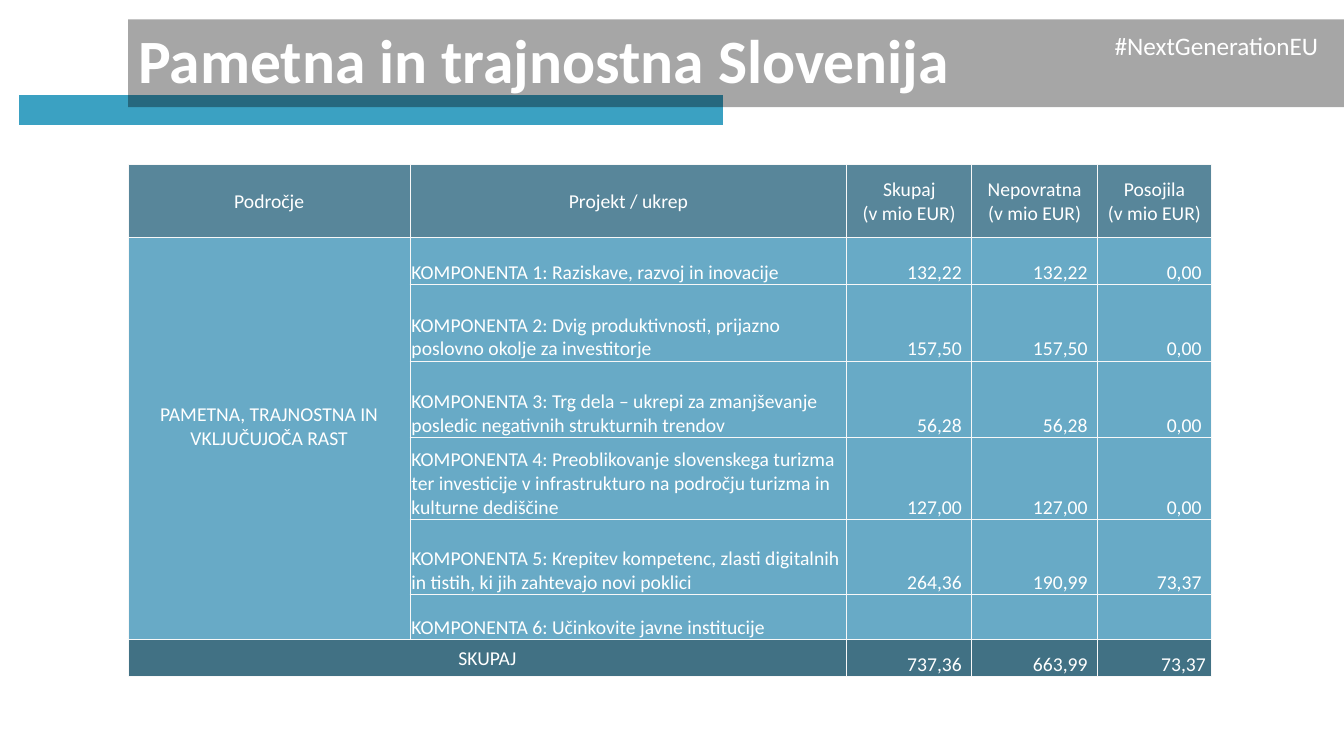
from lxml import etree
from pptx import Presentation
from pptx.dml.color import RGBColor
from pptx.enum import shapes, text
from pptx.oxml.ns import qn
from pptx.util import Cm, Pt

# Content
TITLE = "Pametna in trajnostna Slovenija"
HASHTAG = "#NextGenerationEU"
HEADER = ["Področje", "Projekt / ukrep", "Skupaj\n(v mio EUR)",
          "Nepovratna\n(v mio EUR)", "Posojila\n(v mio EUR)"]
AREA = "PAMETNA, TRAJNOSTNA IN VKLJUČUJOČA RAST"
COMPONENTS = [
    ("KOMPONENTA 1: Raziskave, razvoj in inovacije", "132,22", "132,22", "0,00"),
    ("KOMPONENTA 2: Dvig produktivnosti, prijazno poslovno okolje za investitorje",
     "157,50", "157,50", "0,00"),
    ("KOMPONENTA 3: Trg dela – ukrepi za zmanjševanje posledic negativnih "
     "strukturnih trendov", "56,28", "56,28", "0,00"),
    ("KOMPONENTA 4: Preoblikovanje slovenskega turizma ter investicije v "
     "infrastrukturo na področju turizma in kulturne dediščine",
     "127,00", "127,00", "0,00"),
    ("KOMPONENTA 5: Krepitev kompetenc, zlasti digitalnih in tistih, ki jih "
     "zahtevajo novi poklici", "264,36", "190,99", "73,37"),
    ("KOMPONENTA 6: Učinkovite javne institucije", "", "", ""),
]
TOTAL = ["SKUPAJ", "", "737,36", "663,99", "73,37"]

# Layout and style
COL_WIDTHS = [7.11, 11, 3.15, 3.17, 2.87]
ROW_HEIGHTS = [1.83, 1.19, 1.93, 1.93, 2.06, 1.9, 1.12, 0.94]
LEFT = 3.23
COLORS = {"accent": "3BA1C2", "band": "000000", "text": "FFFFFF", "header": "58869A",
          "body": "68AAC6", "total": "417184", "border": "F8F8F8"}
FONT = "Calibri"


def rgb(name):
    return RGBColor.from_string(COLORS[name])


def style_text(tf, size, align, bold=False):
    for p in tf.paragraphs:
        p.alignment = align
        for r in p.runs:
            r.font.name, r.font.size, r.font.bold = FONT, Pt(size), bold
            r.font.color.rgb = rgb("text")


def add_borders(cell):
    tcPr = cell._tc.get_or_add_tcPr()
    for side in ("a:lnL", "a:lnR", "a:lnT", "a:lnB"):
        ln = etree.SubElement(tcPr, qn(side), w=str(Pt(1)))
        fill = etree.SubElement(ln, qn("a:solidFill"))
        etree.SubElement(fill, qn("a:srgbClr"), val=COLORS["border"])


def build_table(s):
    rows = [HEADER] + [["", *c] for c in COMPONENTS] + [TOTAL]
    rows[1][0] = AREA
    last = len(rows) - 1
    table = s.shapes.add_table(len(rows), len(HEADER), Cm(LEFT), Cm(4.15),
                               Cm(sum(COL_WIDTHS)), Cm(sum(ROW_HEIGHTS))).table
    table.first_row = table.horz_banding = False
    for column, width in zip(table.columns, COL_WIDTHS):
        column.width = Cm(width)
    for row, height in zip(table.rows, ROW_HEIGHTS):
        row.height = Cm(height)

    for i, row in enumerate(rows):
        for j, value in enumerate(row):
            cell = table.cell(i, j)
            add_borders(cell)
            cell.fill.solid()
            cell.fill.fore_color.rgb = rgb({0: "header", last: "total"}.get(i, "body"))
            cell.margin_left = cell.margin_right = cell.margin_top = Cm(0.03)
            cell.margin_bottom = 0
            cell.text = value
            align, anchor = text.PP_ALIGN.CENTER, text.MSO_ANCHOR.MIDDLE
            if i > 0 and j > 0:
                anchor = text.MSO_ANCHOR.BOTTOM
                align = text.PP_ALIGN.LEFT if j == 1 else text.PP_ALIGN.RIGHT
                if j > 1:
                    cell.margin_right = Cm(0.25)
            cell.vertical_anchor = anchor
            style_text(cell.text_frame, 14, align)

    table.cell(1, 0).margin_bottom = Cm(0.6)
    table.cell(last, 4).margin_right = Cm(0.14)
    table.cell(1, 0).merge(table.cell(last - 1, 0))
    table.cell(last, 0).merge(table.cell(last, 1))


def main():
    prs = Presentation()
    prs.slide_width, prs.slide_height = Cm(33.87), Cm(19.05)
    s = prs.slides.add_slide(prs.slide_layouts[5])

    # Accent bar, placed behind the title band
    bar = s.shapes.add_shape(shapes.MSO_SHAPE.FLOWCHART_PROCESS,
                             Cm(0.48), Cm(2.4), Cm(17.73), Cm(0.75))
    bar.shadow.inherit = False
    bar.fill.solid()
    bar.fill.fore_color.rgb = rgb("accent")
    bar.line.fill.background()
    s.shapes._spTree.insert(2, bar._element)

    # Title on a translucent band
    title = s.shapes.title
    title.left, title.top, title.width, title.height = Cm(LEFT), Cm(0.49), Cm(30.64), Cm(2.21)
    title.fill.solid()
    title.fill.fore_color.rgb = rgb("band")
    color = title._element.spPr.find(".//" + qn("a:srgbClr"))
    etree.SubElement(color, qn("a:alpha"), val="35000")
    tf = title.text_frame
    tf.text = TITLE
    tf.auto_size = text.MSO_AUTO_SIZE.NONE
    tf.vertical_anchor = text.MSO_ANCHOR.MIDDLE
    tf.paragraphs[0].line_spacing = 0.9
    style_text(tf, 44, text.PP_ALIGN.LEFT, bold=True)

    # Hashtag
    tag = s.shapes.add_textbox(Cm(27.84), Cm(0.64), Cm(5.72), Cm(1.03))
    tag.text_frame.text = HASHTAG
    tag.text_frame.word_wrap = False
    tag.text_frame.auto_size = text.MSO_AUTO_SIZE.SHAPE_TO_FIT_TEXT
    style_text(tag.text_frame, 18, text.PP_ALIGN.LEFT)

    build_table(s)
    prs.save("out.pptx")


if __name__ == "__main__":
    main()
